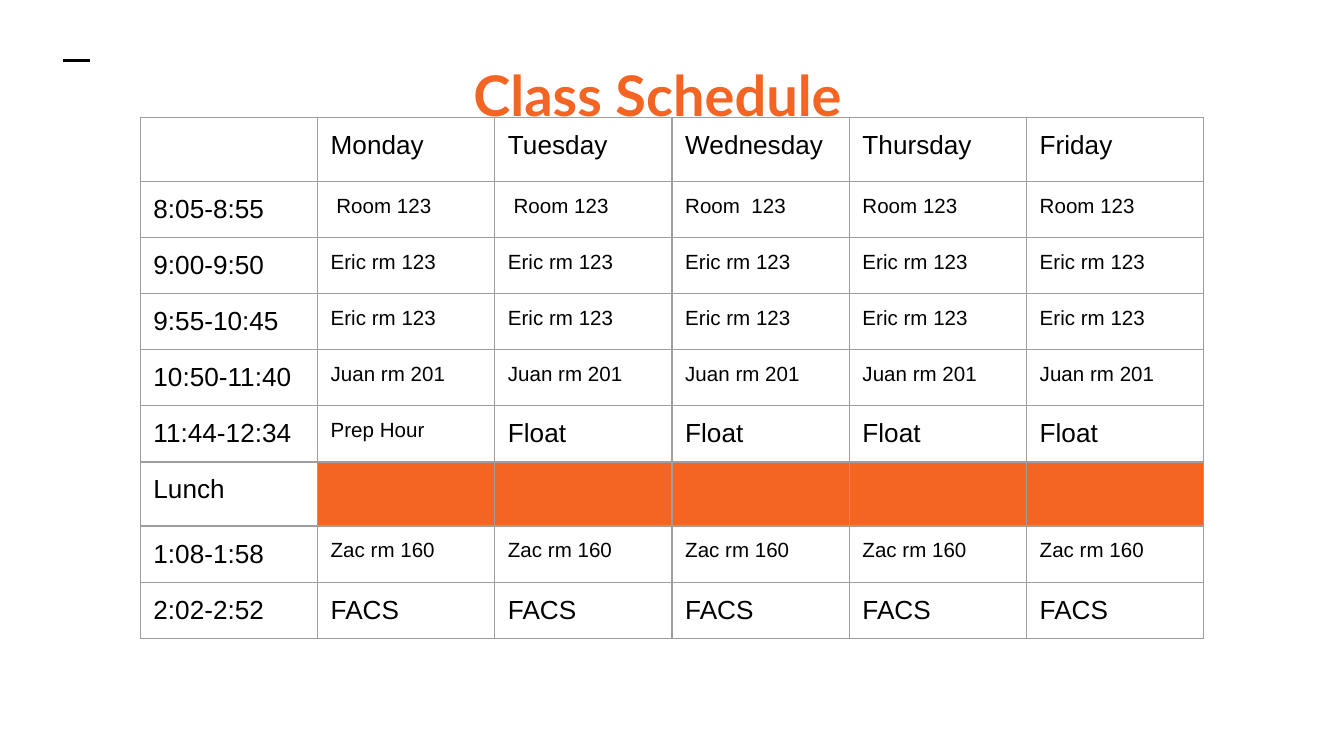
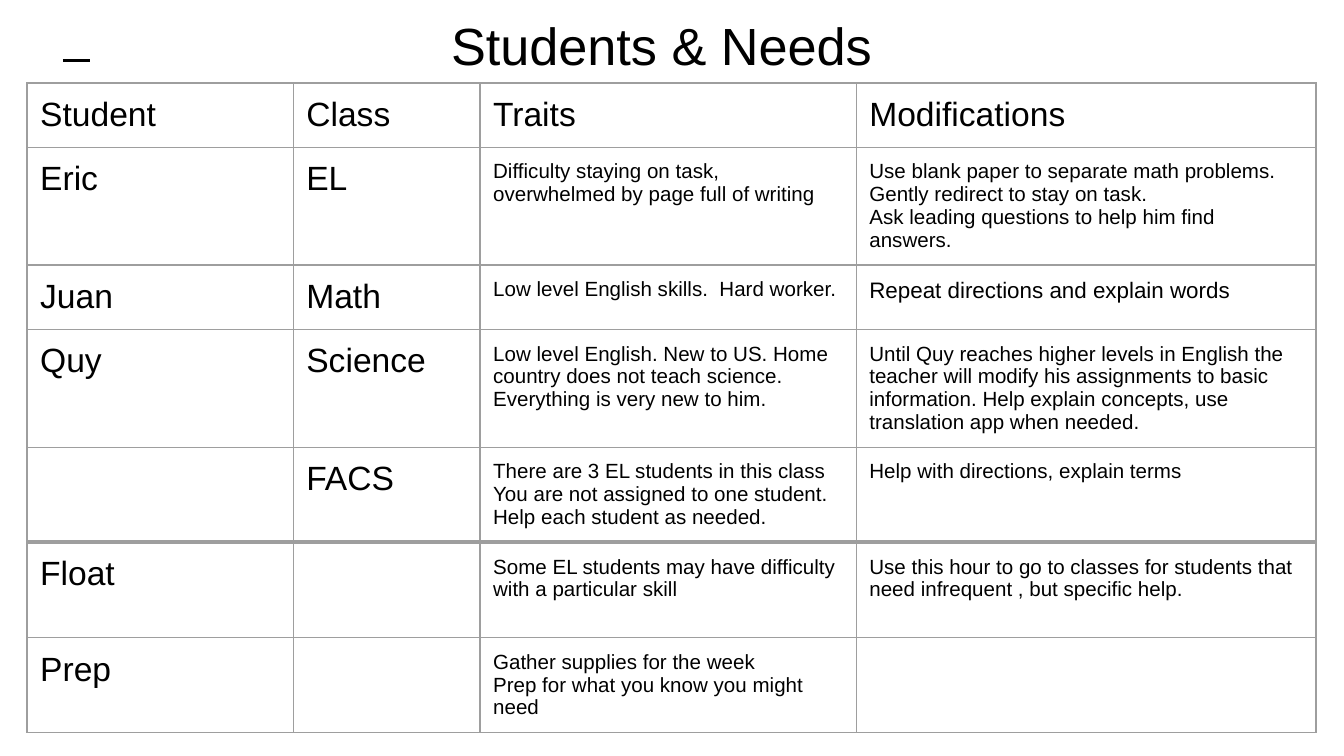
from lxml import etree
from pptx import Presentation
from pptx.dml.color import RGBColor
from pptx.enum.shapes import MSO_CONNECTOR
from pptx.enum.text import MSO_ANCHOR as ANCHOR, MSO_AUTO_SIZE, PP_ALIGN as ALIGN
from pptx.oxml import parse_xml
from pptx.oxml.ns import nsdecls, qn
from pptx.util import Cm, Pt

BLACK = RGBColor(0x00, 0x00, 0x00)
GRAY = RGBColor(0x9E, 0x9E, 0x9E)
ORANGE = RGBColor(0xF4, 0x65, 0x24)
FONT = "Arial"
TITLE_FONT = "Lato"
INSET = Cm(0.25)
THIN, THICK = Pt(0.75), Pt(2.25)

DAYS = ["Monday", "Tuesday", "Wednesday", "Thursday", "Friday"]
SCHEDULE = [
    [""] + DAYS,
    ["8:05-8:55", " Room 123", " Room 123", "Room  123", "Room 123", "Room 123"],
    ["9:00-9:50"] + ["Eric rm 123"] * 5,
    ["9:55-10:45"] + ["Eric rm 123"] * 5,
    ["10:50-11:40"] + ["Juan rm 201"] * 5,
    ["11:44-12:34", "Prep Hour"] + ["Float"] * 4,
    ["Lunch"] + [""] * 5,
    ["1:08-1:58"] + ["Zac rm 160"] * 5,
    ["2:02-2:52"] + ["FACS"] * 5,
]
LUNCH_ROW = 6

NEEDS = [
    ["Student", "Class", "Traits", "Modifications"],
    ["Eric", "EL",
     "Difficulty staying on task, overwhelmed by page full of writing",
     "Use blank paper to separate math problems.\nGently redirect to stay on task.\n"
     "Ask leading questions to help him find answers."],
    ["Juan", "Math", "Low level English skills.  Hard worker.",
     "Repeat directions and explain words"],
    ["Quy", "Science",
     "Low level English. New to US. Home country does not teach science. "
     "Everything is very new to him.",
     "Until Quy reaches higher levels in English the teacher will modify his "
     "assignments to basic information. Help explain concepts, use translation "
     "app when needed."],
    ["", "FACS",
     "There are 3 EL students in this class\n"
     "You are not assigned to one student. Help each student as needed.",
     "Help with directions, explain terms"],
    ["Float", "", "Some EL students may have difficulty with a particular skill",
     "Use this hour to go to classes for students that need infrequent , "
     "but specific help."],
    ["Prep", "",
     "Gather supplies for the week\nPrep for what you know you might need", ""],
]
FLOAT_ROW = 5


def schedule_size(row, col, text):
    """Return the point size of a schedule cell."""
    if not text:
        return 18
    return 14 if row == 0 or col == 0 or text in ("Float", "FACS") else 11


def needs_size(row, col, text):
    """Return the point size of a students table cell."""
    if row == 0 or col < 2 or not text:
        return 18
    return 12 if text.startswith("Repeat") else 11


def style_font(font, size, name=FONT, color=BLACK, bold=False):
    """Set the size, face, colour and weight of a font."""
    font.size = Pt(size)
    font.name = name
    font.color.rgb = color
    font.bold = bold


def add_page(prs):
    """Add a blank slide with the short dash at its top left."""
    slide = prs.slides.add_slide(prs.slide_layouts[6])
    dash = slide.shapes.add_connector(
        MSO_CONNECTOR.STRAIGHT, Cm(1.19), Cm(1.14), Cm(1.7), Cm(1.14))
    dash.line.color.rgb = BLACK
    dash.line.width = Pt(1.5)
    etree.SubElement(dash._element.spPr, qn("a:effectLst"))
    return slide


def add_title(slide, text, left, top, width, height, size, **style):
    """Add a centred title and return its text frame."""
    tf = slide.shapes.add_textbox(left, top, width, height).text_frame
    tf.word_wrap = True
    tf.auto_size = MSO_AUTO_SIZE.NONE
    tf.margin_left = tf.margin_right = tf.margin_top = tf.margin_bottom = INSET
    p = tf.paragraphs[0]
    p.text = text
    p.alignment = ALIGN.CENTER
    style_font(p.font, size, **style)
    return tf


def set_borders(cell, top=THIN, bottom=THIN):
    """Draw the four gray borders of a cell."""
    props = cell._tc.get_or_add_tcPr()
    sides = {"L": THIN, "R": THIN, "T": top, "B": bottom}
    for i, (side, width) in enumerate(sides.items()):
        props.insert(i, parse_xml(
            f'<a:ln{side} {nsdecls("a")} w="{int(width)}"><a:solidFill>'
            f'<a:srgbClr val="{GRAY}"/></a:solidFill></a:ln{side}>'))


def fill_cell(cell, text, size):
    """Write the text of a cell and leave its background clear."""
    cell.margin_left = cell.margin_right = INSET
    cell.margin_top = cell.margin_bottom = INSET
    cell.fill.background()
    cell.text = text
    for p in cell.text_frame.paragraphs:
        style_font(p.font, size)


def add_grid(slide, rows, left, top, widths, heights, size_of, thick_above=None):
    """Add a bordered table, with a thick rule above one row if given."""
    table = slide.shapes.add_table(
        len(rows), len(widths), left, top, sum(widths), sum(heights)).table
    table.first_row = table.horz_banding = False
    for column, width in zip(table.columns, widths):
        column.width = width
    for i, (texts, height) in enumerate(zip(rows, heights)):
        table.rows[i].height = height
        for j, text in enumerate(texts):
            cell = table.cell(i, j)
            fill_cell(cell, text, size_of(i, j, text))
            set_borders(cell,
                        top=THICK if i == thick_above else THIN,
                        bottom=THICK if i + 1 == thick_above else THIN)
    return table


def add_schedule(prs):
    """Build the class schedule slide."""
    slide = add_page(prs)
    tf = add_title(slide, "Class Schedule", Cm(0.48), Cm(1.88), Cm(23.9), Cm(1.02),
                   30, name=TITLE_FONT, color=ORANGE, bold=True)
    tf.vertical_anchor = ANCHOR.BOTTOM
    tf.margin_bottom = Cm(0.48)
    tf.paragraphs[0].line_spacing = 1.15
    table = add_grid(slide, SCHEDULE, Cm(2.65), Cm(2.22), [Cm(3.35)] * 6,
                     [Cm(1.06)] * len(SCHEDULE), schedule_size)
    for col in range(1, 6):
        fill = table.cell(LUNCH_ROW, col).fill
        fill.solid()
        fill.fore_color.rgb = ORANGE


def add_needs(prs):
    """Build the students and needs slide."""
    slide = add_page(prs)
    widths = [Cm(w) for w in (5.03, 3.53, 7.11, 8.69)]
    heights = [Cm(1.06)] * FLOAT_ROW + [Cm(1.8), Cm(1.35)]
    add_grid(slide, NEEDS, Cm(0.51), Cm(1.57), widths, heights, needs_size,
             thick_above=FLOAT_ROW)
    add_title(slide, "Students & Needs", Cm(4.88), Cm(0), Cm(15.24), Cm(1.8), 28)


def main():
    """Build and save the presentation."""
    prs = Presentation()
    prs.slide_width, prs.slide_height = Cm(25.4), Cm(14.29)
    add_schedule(prs)
    add_needs(prs)
    prs.save("out.pptx")


if __name__ == "__main__":
    main()
